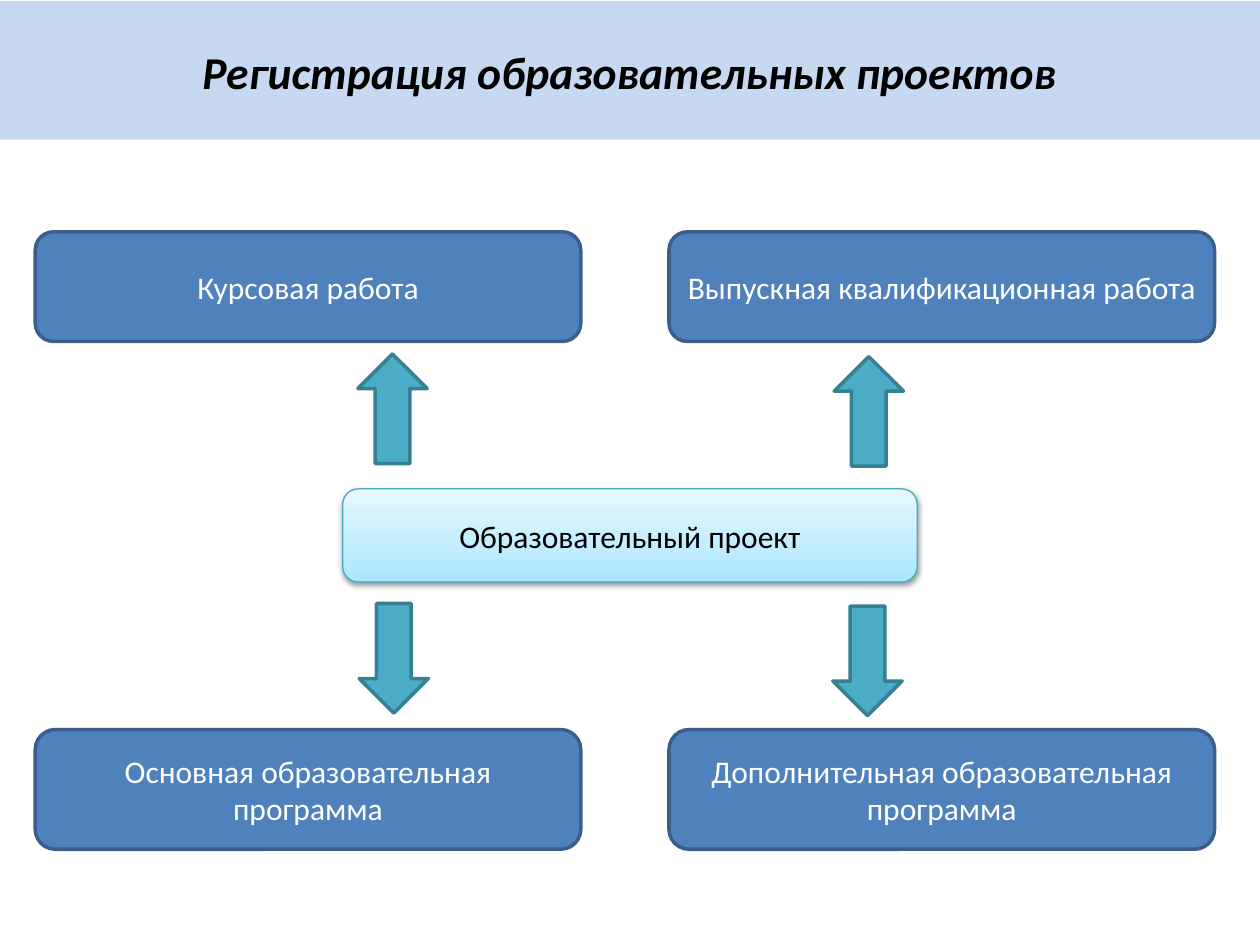
from lxml.etree import SubElement
from pptx import Presentation
from pptx.dml.color import RGBColor
from pptx.enum.shapes import MSO_SHAPE
from pptx.enum.text import MSO_ANCHOR, MSO_AUTO_SIZE, PP_ALIGN
from pptx.oxml.ns import qn
from pptx.util import Inches, Pt

TITLE = "Регистрация образовательных проектов"
CENTER = "Образовательный проект"
BOX_ROWS = [
    (1.84, 0.87, ["Курсовая работа", "Выпускная квалификационная работа"]),
    (5.79, 0.95, ["Основная образовательная программа",
                  "Дополнительная образовательная программа"]),
]
BOX_LEFTS, BOX_WIDTH = (0.28, 5.31), 4.33
ARROWS = [(2.84, 2.81, 0), (6.62, 2.83, 0), (6.61, 4.81, 180), (2.85, 4.79, 180)]
GRADIENT = [(0, "A7E6FF"), (35, "C1EDFF"), (100, "E7F8FF")]
COLORS = {
    "band": "C6D9F1", "black": "000000", "white": "FFFFFF",
    "box": "4F81BD", "box_line": "3A5F8C",
    "arrow": "4BACC6", "arrow_line": "377F92", "center_line": "46AAC5",
}


def color(name):
    return RGBColor.from_string(COLORS[name])


def add_shape(slide, kind, bounds, fill, line=None, line_width=2):
    shape = slide.shapes.add_shape(kind, *map(Inches, bounds))
    shape.shadow.inherit = False
    if fill:
        shape.fill.solid()
        shape.fill.fore_color.rgb = color(fill)
    if line:
        shape.line.color.rgb = color(line)
        shape.line.width = Pt(line_width)
    else:
        shape.line.fill.background()
    return shape


def write_text(shape, text, size, font_color, emphasis=False):
    frame = shape.text_frame
    frame.text = text
    frame.word_wrap = True
    frame.auto_size = MSO_AUTO_SIZE.NONE
    frame.vertical_anchor = MSO_ANCHOR.MIDDLE
    frame.margin_left = frame.margin_right = Inches(0.08)
    paragraph = frame.paragraphs[0]
    paragraph.alignment = PP_ALIGN.CENTER
    font = paragraph.runs[0].font
    font.name, font.size = "Calibri", Pt(size)
    font.bold = font.italic = emphasis
    font.color.rgb = color(font_color)


def add_color_element(parent, value):
    return SubElement(parent, qn("a:srgbClr"), val=value)


def apply_gradient(shape):
    shape.fill.gradient()
    shape.fill.gradient_angle = 90
    stops = shape.element.spPr.find(qn("a:gradFill")).find(qn("a:gsLst"))
    for stop in list(stops):
        stops.remove(stop)
    for position, value in GRADIENT:
        add_color_element(SubElement(stops, qn("a:gs"), pos=str(position * 1000)), value)


def apply_shadow(shape):
    effects = shape.element.spPr.find(qn("a:effectLst"))
    shadow = SubElement(effects, qn("a:outerShdw"), blurRad=str(Pt(3.1)),
                        dist=str(Pt(1.6)), dir="5400000", rotWithShape="0")
    SubElement(add_color_element(shadow, COLORS["black"]), qn("a:alpha"), val="38000")


def main():
    """Build the slide about registering educational projects."""
    presentation = Presentation()
    presentation.slide_width, presentation.slide_height = Inches(10), Inches(7.5)
    slide = presentation.slides.add_slide(presentation.slide_layouts[5])

    band = add_shape(slide, MSO_SHAPE.RECTANGLE, (0, 0.01, 10, 1.1), "band")
    title = slide.shapes.title
    title.element.addprevious(band.element)
    title.left, title.top, title.width, title.height = map(Inches, (0, 0.26, 10, 0.61))
    write_text(title, TITLE, 26, "black", emphasis=True)

    center = add_shape(slide, MSO_SHAPE.ROUNDED_RECTANGLE, (2.72, 3.88, 4.56, 0.74),
                       None, "center_line", 0.75)
    apply_gradient(center)
    apply_shadow(center)
    write_text(center, CENTER, 18, "black")

    for top, height, labels in BOX_ROWS:
        for left, label in zip(BOX_LEFTS, labels):
            box = add_shape(slide, MSO_SHAPE.ROUNDED_RECTANGLE,
                            (left, top, BOX_WIDTH, height), "box", "box_line")
            write_text(box, label, 18, "white")

    for left, top, rotation in ARROWS:
        arrow = add_shape(slide, MSO_SHAPE.UP_ARROW, (left, top, 0.55, 0.87),
                          "arrow", "arrow_line")
        arrow.rotation = rotation

    presentation.save("out.pptx")


if __name__ == "__main__":
    main()
